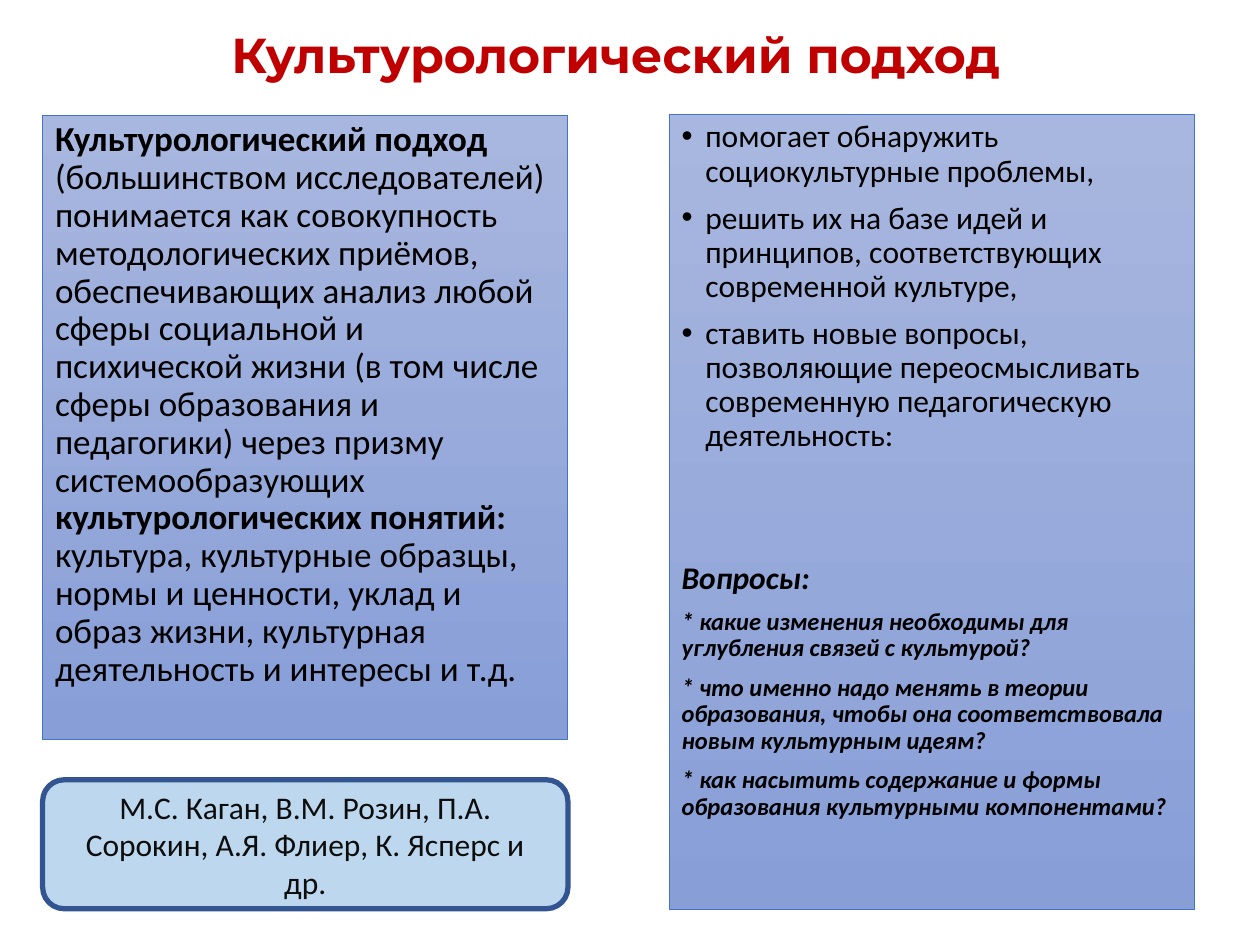
from dataclasses import dataclass

from lxml import etree
from pptx import Presentation
from pptx.dml.color import RGBColor
from pptx.enum.shapes import MSO_SHAPE
from pptx.enum.text import MSO_ANCHOR, PP_ALIGN
from pptx.oxml.ns import qn
from pptx.util import Cm, Pt

RECT, ROUND_RECT = MSO_SHAPE.RECTANGLE, MSO_SHAPE.ROUNDED_RECTANGLE
TOP, MIDDLE = MSO_ANCHOR.TOP, MSO_ANCHOR.MIDDLE
LEFT, CENTER = PP_ALIGN.LEFT, PP_ALIGN.CENTER


@dataclass(frozen=True)
class Theme:
    title_font: str = "Montserrat"
    body_font: str = "Calibri"
    title_size: int = 28
    definition_size: int = 20
    body_size: int = 18
    question_size: int = 14
    title: str = "C00000"
    text: str = "000000"
    authors_text: str = "0D0D0D"
    panel_top: str = "A8B7DF"
    panel_bottom: str = "889ED7"
    panel_line: str = "4472C4"
    authors_fill: str = "BDD7EE"
    authors_line: str = "325491"


THEME = Theme()
COLUMN_W = 10.59
LEFT_X, RIGHT_X = 0.86, 13.49
BULLET_INDENT = 0.48
PARA_GAP = 7.5
QUESTIONS_GAP = 62

DEFINITION = [
    ("Культурологический подход ", True),
    ("(большинством исследователей) понимается как совокупность "
     "методологических приёмов, обеспечивающих анализ любой сферы социальной "
     "и психической жизни (в том числе сферы образования и педагогики) через "
     "призму системообразующих ", False),
    ("культурологических понятий:", True),
    (" культура, культурные образцы, нормы и ценности, уклад и образ жизни, "
     "культурная деятельность и интересы и т.д.", False),
]
BENEFITS = [
    "помогает обнаружить социокультурные проблемы,",
    "решить их на базе идей и принципов, соответствующих современной культуре,",
    "ставить новые вопросы, позволяющие переосмысливать современную "
    "педагогическую деятельность:",
]
QUESTIONS = [
    "* какие изменения необходимы для углубления связей с культурой?",
    "* что именно надо менять в теории образования, чтобы она "
    "соответствовала новым культурным идеям?",
    "* как насытить содержание и формы образования культурными компонентами?",
]
AUTHORS = "М.С. Каган, В.М. Розин, П.А. Сорокин, А.Я. Флиер, К. Ясперс и др."


def rgb(value):
    return RGBColor.from_string(value)


def set_frame(sp, anchor):
    tf = sp.text_frame
    tf.word_wrap = True
    tf.vertical_anchor = anchor
    return tf


def add_panel(slide, kind, box, line, line_width, anchor=TOP):
    sp = slide.shapes.add_shape(kind, *map(Cm, box))
    sp.shadow.inherit = False
    sp.line.color.rgb = rgb(line)
    sp.line.width = Pt(line_width)
    set_frame(sp, anchor)
    return sp


def add_gradient_panel(slide, box):
    sp = add_panel(slide, RECT, box, THEME.panel_line, 0.5)
    sp.fill.gradient()
    sp.fill.gradient_angle = 270
    for stop, color in zip(sp.fill.gradient_stops,
                           (THEME.panel_top, THEME.panel_bottom)):
        stop.color.rgb = rgb(color)
    return sp.text_frame


def add_run(p, text, color=THEME.text, **formats):
    r = p.add_run()
    r.text = text
    r.font.color.rgb = rgb(color)
    values = {"name": THEME.body_font, "size": THEME.body_size, **formats}
    values["size"] = Pt(values["size"])
    for name, value in values.items():
        setattr(r.font, name, value)


def add_paragraph(tf, align=LEFT, spacing=0.9, gap=PARA_GAP):
    first = tf.paragraphs[0]
    is_first = not first.runs
    p = first if is_first else tf.add_paragraph()
    formats = {"alignment": align, "line_spacing": spacing,
               "space_before": Pt(0 if is_first else gap)}
    for name, value in formats.items():
        setattr(p, name, value)
    return p


def add_bullet(p):
    pPr = p._p.get_or_add_pPr()
    pPr.set("marL", str(Cm(BULLET_INDENT)))
    pPr.set("indent", str(-Cm(BULLET_INDENT)))
    etree.SubElement(pPr, qn("a:buFont"), typeface="Arial")
    etree.SubElement(pPr, qn("a:buChar"), char="•")


def add_title(slide, text):
    sp = slide.shapes.add_textbox(Cm(0.51), Cm(0), Cm(23.8), Cm(2.31))
    p = add_paragraph(set_frame(sp, MIDDLE), CENTER)
    add_run(p, text, THEME.title, name=THEME.title_font,
            size=THEME.title_size, bold=True)


def add_definition(slide):
    p = add_paragraph(add_gradient_panel(slide, (LEFT_X, 2.33, COLUMN_W, 12.57)))
    for text, bold in DEFINITION:
        add_run(p, text, size=THEME.definition_size, bold=bold)


def add_benefits(slide):
    tf = add_gradient_panel(slide, (RIGHT_X, 2.31, COLUMN_W, 16.02))
    for text in BENEFITS:
        p = add_paragraph(tf)
        add_bullet(p)
        add_run(p, text)
    add_run(add_paragraph(tf, gap=QUESTIONS_GAP), "Вопросы:",
            bold=True, italic=True)
    for text in QUESTIONS:
        add_run(add_paragraph(tf), text, size=THEME.question_size,
                bold=True, italic=True)


def add_authors(slide):
    sp = add_panel(slide, ROUND_RECT, (LEFT_X, 15.72, COLUMN_W, 2.6),
                   THEME.authors_line, 3, MIDDLE)
    sp.fill.solid()
    sp.fill.fore_color.rgb = rgb(THEME.authors_fill)
    p = add_paragraph(sp.text_frame, CENTER, spacing=1.0)
    add_run(p, AUTHORS, THEME.authors_text)


def main():
    prs = Presentation()
    prs.slide_width, prs.slide_height = Cm(25.4), Cm(19.05)
    s = prs.slides.add_slide(prs.slide_layouts[6])
    add_title(s, "Культурологический подход")
    add_definition(s)
    add_benefits(s)
    add_authors(s)
    prs.save("out.pptx")


if __name__ == "__main__":
    main()
